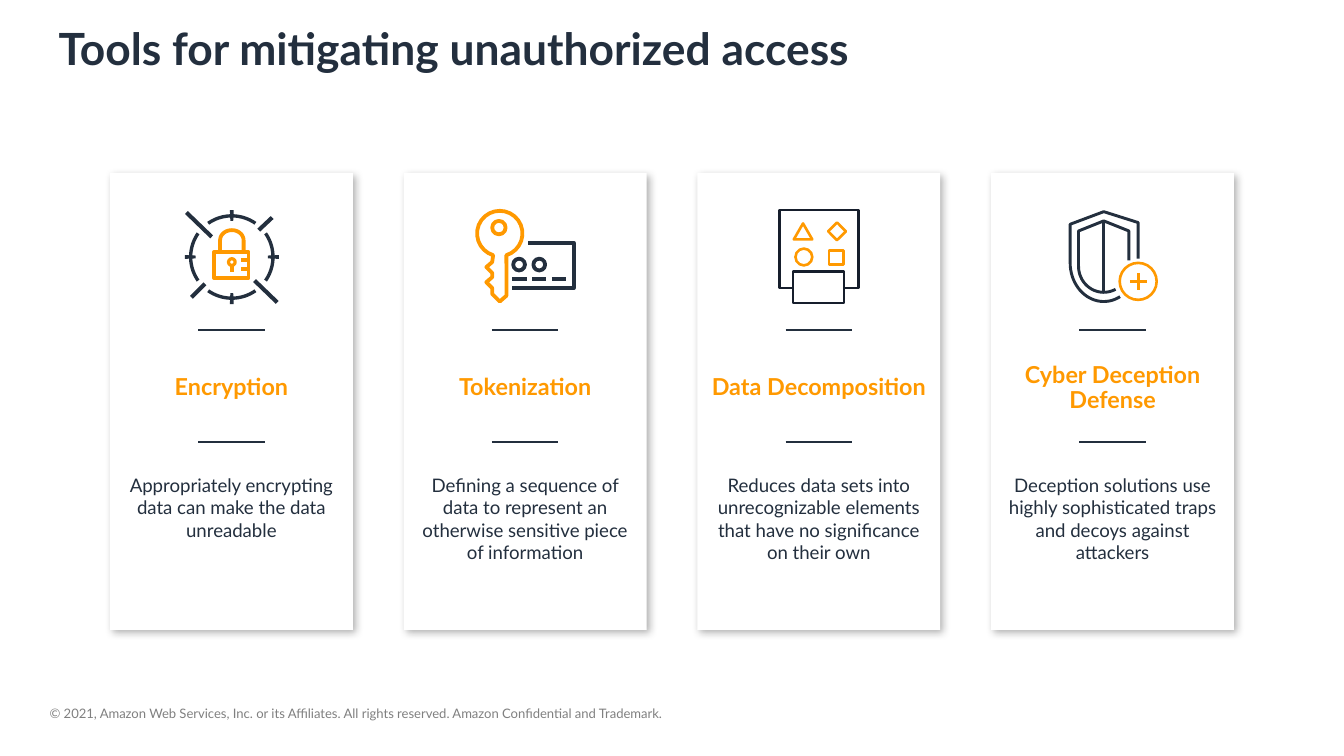
import math

from lxml import etree
from pptx import Presentation
from pptx.dml.color import RGBColor
from pptx.enum import shapes, text
from pptx.oxml import ns
from pptx.util import Inches, Pt

NAVY, ORANGE, WHITE, INK, GRAY = "232F3E", "FF9900", "FFFFFF", "161E2C", "808080"
FONT = "Lato"
CARD_LEFT, CARD_TOP, CARD_WIDTH, CARD_HEIGHT = 1.31, 2.06, 2.89, 5.44
CARD_STEP = 10.49 / 3
RULE_WIDTH = 0.79


def color(value):
    return RGBColor.from_string(value)


def style(shape, fill=None, line=None, weight=2.25):
    shape.shadow.inherit = False
    if fill:
        shape.fill.solid()
        shape.fill.fore_color.rgb = color(fill)
    else:
        shape.fill.background()
    if line:
        shape.line.color.rgb = color(line)
        shape.line.width = Pt(weight)
    else:
        shape.line.fill.background()


def add_shape(group, kind, box, fill=None, line=None, weight=2.25):
    shape = group.shapes.add_shape(kind, *map(Inches, box))
    style(shape, fill, line, weight)
    return shape


def add_ring(group, x, y, radius, line, weight):
    box = (x - radius, y - radius, 2 * radius, 2 * radius)
    add_shape(group, shapes.MSO_SHAPE.OVAL, box, line=line, weight=weight)


def add_line(group, start, end, line=NAVY, weight=1.5):
    connector = group.shapes.add_connector(
        shapes.MSO_CONNECTOR.STRAIGHT, *map(Inches, (*start, *end)))
    connector.line.color.rgb = color(line)
    connector.line.width = Pt(weight)
    etree.SubElement(connector._element.spPr, ns.qn("a:effectLst"))


def add_outline(group, points, close=False, fill=None, line=None, weight=2.25):
    corners = [(Inches(x), Inches(y)) for x, y in points]
    builder = group.shapes.build_freeform(*corners[0])
    builder.add_line_segments(corners[1:], close=close)
    style(builder.convert_to_shape(), fill, line, weight)


def arc(x, y, radius_x, radius_y, start, end, steps=24):
    angles = [math.radians(start + (end - start) * i / steps) for i in range(steps + 1)]
    return [(x + radius_x * math.cos(a), y + radius_y * math.sin(a)) for a in angles]


def add_text(owner, box, words, size, ink, bold=False, centered=False,
             insets=(0.1, 0.05), middle=False, spacing=None):
    frame = owner.shapes.add_textbox(*map(Inches, box)).text_frame
    frame.word_wrap = True
    frame.margin_left = frame.margin_right = Inches(insets[0])
    frame.margin_top = frame.margin_bottom = Inches(insets[1])
    frame.vertical_anchor = text.MSO_ANCHOR.MIDDLE if middle else text.MSO_ANCHOR.TOP
    paragraph = frame.paragraphs[0]
    paragraph.alignment = text.PP_ALIGN.CENTER if centered else text.PP_ALIGN.LEFT
    if spacing:
        paragraph.line_spacing = spacing
        paragraph.space_after = Pt(11.2)
    run = paragraph.add_run()
    run.text = words
    run.font.name = FONT
    run.font.size = Pt(size)
    run.font.bold = bold
    run.font.color.rgb = color(ink)


def add_card_shadow(card):
    effects = card._element.spPr.find(ns.qn("a:effectLst"))
    shadow = etree.SubElement(
        effects, ns.qn("a:outerShdw"), blurRad=str(Pt(7)), dist=str(Pt(3)),
        dir=str(45 * 60000), algn="tl", rotWithShape="0")
    black = etree.SubElement(shadow, ns.qn("a:srgbClr"), val="000000")
    etree.SubElement(black, ns.qn("a:alpha"), val="30000")


def add_card(group, left, heading, description):
    card = add_shape(group, shapes.MSO_SHAPE.RECTANGLE,
                     (left, CARD_TOP, CARD_WIDTH, CARD_HEIGHT), WHITE)
    add_card_shadow(card)
    rule_left = left + (CARD_WIDTH - RULE_WIDTH) / 2
    for y in (3.93, 5.26):
        add_line(group, (rule_left, y), (rule_left + RULE_WIDTH, y))
    add_text(group, (left, 4.26, CARD_WIDTH, 0.72), heading, 20, ORANGE, bold=True,
             centered=True, insets=(0.02, 0.02), middle=True, spacing=0.9)
    add_text(group, (left, 5.62, CARD_WIDTH, 1.05), description, 16, NAVY,
             centered=True, insets=(0.1, 0.02))


def draw_lock(group):
    x, y = 2.76, 3.06
    for axis in range(0, 360, 90):
        segment = []
        for radius, tick, side in ((0.51, 0.56, 1), (0.47, 0.43, -1)):
            near, far = 2.3 * side, 35 * side
            segment += arc(x, y, radius, radius, axis - far, axis - near)
            segment += arc(x, y, tick, tick, axis - near, axis + near, 1)
            segment += arc(x, y, radius, radius, axis + near, axis + far)
        add_outline(group, segment, close=True, fill=NAVY)
    for start, end in (((2.22, 2.53), (2.52, 2.82)), ((3.03, 3.34), (3.3, 3.6)),
                       ((2.28, 3.54), (2.44, 3.38)), ((3.08, 2.74), (3.24, 2.59))):
        add_line(group, start, end, weight=3.5)
    add_shape(group, shapes.MSO_SHAPE.RECTANGLE, (2.55, 3, 0.41, 0.31),
              line=ORANGE, weight=3.25)
    shackle = [(2.62, 2.98), *arc(x, 2.86, 0.14, 0.12, 180, 360), (2.9, 2.98)]
    add_outline(group, shackle, line=ORANGE, weight=3.25)
    add_ring(group, x, 3.12, 0.04, ORANGE, 2.75)
    add_line(group, (x, 3.16), (x, 3.24), ORANGE, 3.25)
    for tooth in (3.1, 3.2):
        add_line(group, (2.87, tooth), (2.95, tooth), ORANGE, 3.25)


def draw_key_and_card(group):
    notches = [(5.86, 3.5), (5.86, 3.43), (5.79, 3.36), (5.86, 3.3),
               (5.86, 3.25), (5.79, 3.18), (5.86, 3.12)]
    key = [*arc(5.95, 2.78, 0.27, 0.27, 107, 433), (6.03, 3.52), (5.95, 3.59), *notches]
    add_outline(group, key, close=True, line=ORANGE, weight=3.25)
    add_ring(group, 5.94, 2.71, 0.08, ORANGE, 3.25)
    card = [(6.29, 2.89), (6.83, 2.89), (6.83, 3.43), (6.1, 3.43)]
    add_outline(group, card, line=NAVY, weight=3.25)
    for x in (6.18, 6.42):
        add_ring(group, x, 3.15, 0.07, NAVY, 3.25)
    for i in range(3):
        x = 6.1 + 0.235 * i
        add_line(group, (x, 3.32), (x + 0.17, 3.32), weight=3.25)


def draw_data_pieces(group):
    kinds = shapes.MSO_SHAPE
    add_shape(group, kinds.RECTANGLE, (9.28, 2.5, 0.94, 0.93), line=INK)
    add_shape(group, kinds.RECTANGLE, (9.44, 3.23, 0.61, 0.38), WHITE, INK)
    add_shape(group, kinds.ISOSCELES_TRIANGLE, (9.45, 2.66, 0.22, 0.19), line=ORANGE)
    add_shape(group, kinds.RECTANGLE, (9.87, 2.98, 0.17, 0.17), line=ORANGE)
    add_ring(group, 9.57, 3.06, 0.1, ORANGE, 2.25)
    diamond = add_shape(group, kinds.RECTANGLE, (9.89, 2.68, 0.15, 0.15), line=ORANGE)
    diamond.rotation = 45.7


def draw_shield(group):
    x = 13.14
    outer = [(13.55, 3.08), (13.55, 2.65), (x, 2.52), (12.74, 2.67),
             *arc(x, 3.13, 0.4, 0.46, 180, 61)]
    inner = [(13.44, 3.1), (13.44, 2.75), (x, 2.63), (12.84, 2.75),
             *arc(x, 3.17, 0.3, 0.31, 180, 62)]
    for edge in (outer, inner):
        add_outline(group, edge, line=NAVY, weight=2.5)
    add_line(group, (x, 2.63), (x, 3.48), weight=2.5)
    plus_x, plus_y, arm = 13.55, 3.35, 0.1
    add_line(group, (plus_x - arm, plus_y), (plus_x + arm, plus_y), ORANGE, 2.25)
    add_line(group, (plus_x, plus_y - arm), (plus_x, plus_y + arm), ORANGE, 2.25)
    add_ring(group, plus_x, plus_y, 0.22, ORANGE, 2.25)


CARDS = [
    ("Encryption", "Appropriately encrypting data can make the data unreadable", draw_lock),
    ("Tokenization", "Defining a sequence of data to represent an otherwise sensitive "
     "piece of information", draw_key_and_card),
    ("Data Decomposition", "Reduces data sets into unrecognizable elements that have no "
     "significance on their own", draw_data_pieces),
    ("Cyber Deception Defense", "Deception solutions use highly sophisticated traps and "
     "decoys against attackers", draw_shield),
]


def main():
    presentation = Presentation()
    presentation.slide_width, presentation.slide_height = Inches(16), Inches(9)
    slide = presentation.slides.add_slide(presentation.slide_layouts[6])
    add_text(slide, (0.59, 8.4, 7.78, 0.19),
             "© 2021, Amazon Web Services, Inc. or its Affiliates. All rights reserved. "
             "Amazon Confidential and Trademark.", 11.2, GRAY, insets=(0, 0))
    add_text(slide, (0.6, 0.2, 14.78, 0.95),
             "Tools for mitigating unauthorized access", 38, NAVY, bold=True)
    for i, (heading, description, draw_icon) in enumerate(CARDS):
        group = slide.shapes.add_group_shape()
        add_card(group, CARD_LEFT + CARD_STEP * i, heading, description)
        draw_icon(group)
    presentation.save("out.pptx")


if __name__ == "__main__":
    main()
